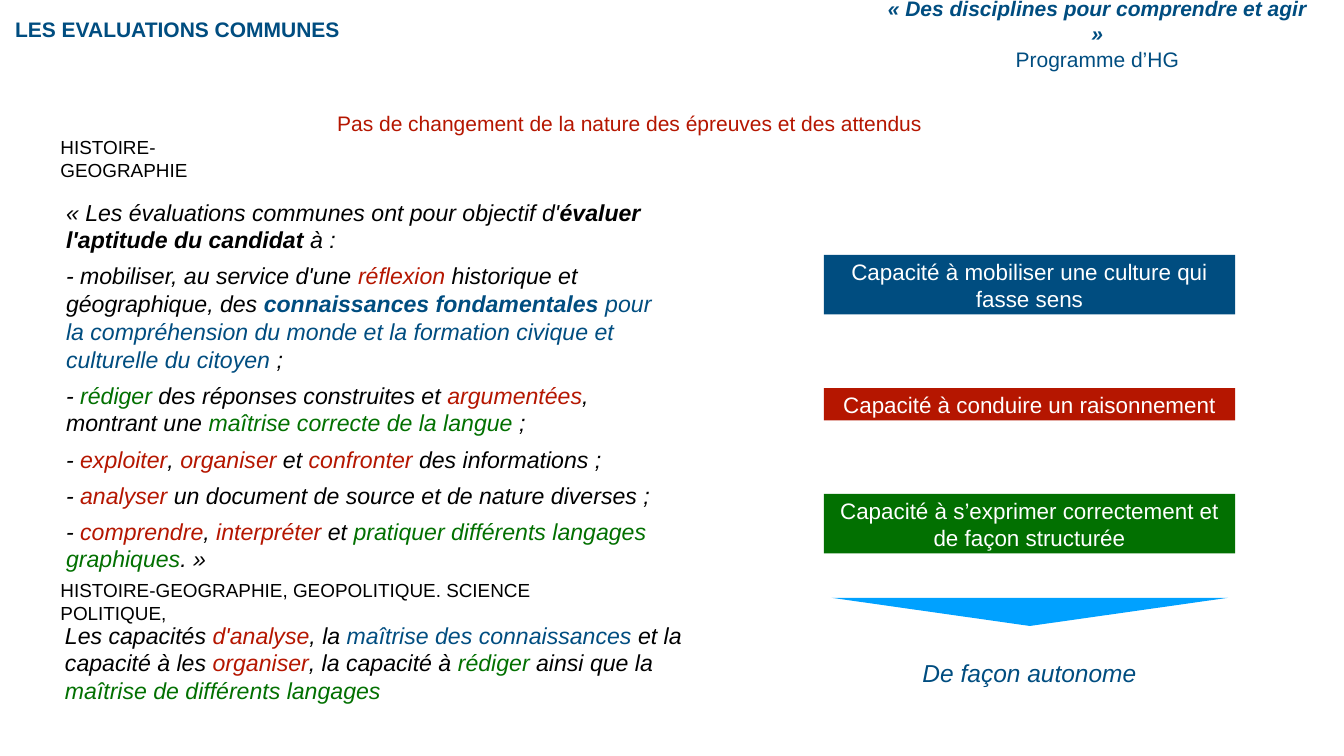
"""Build the slide on the common assessments in history and geography."""
from pptx import Presentation
from pptx import util as u
from pptx.dml.color import RGBColor
from pptx.enum import shapes, text

WIDTH, HEIGHT = u.Inches(26.67), u.Inches(15)
FONT = "Arial"
COLORS = {"black": "000000", "white": "FFFFFF", "blue": "004D80",
          "red": "B51600", "green": "027001", "sky": "00A1FF"}
BANNER_LEFT, BANNER_WIDTH = 61.3, 30.6

OBJECTIVES = [
    ["« Les évaluations communes ont pour objectif d'",
     ("évaluer l'aptitude du candidat", "black", True), " à :"],
    ["- mobiliser, au service d'une ", ("réflexion", "red"),
     " historique et géographique, des ",
     ("connaissances fondamentales", "blue", True),
     (" pour la compréhension du monde et la formation civique et "
      "culturelle du citoyen", "blue"), " ;"],
    ["- ", ("rédiger", "green"), " des réponses construites et ",
     ("argumentées", "red"), ", montrant une ",
     ("maîtrise correcte de la langue", "green"), " ;"],
    ["- ", ("exploiter", "red"), ", ", ("organiser", "red"), " et ",
     ("confronter", "red"), " des informations ;"],
    ["- ", ("analyser", "red"),
     " un document de source et de nature diverses ;"],
    ["- ", ("comprendre", "red"), ", ", ("interpréter", "red"), " et ",
     ("pratiquer différents langages graphiques", "green"), ". »"],
]
SKILLS = [
    ["Les capacités ", ("d'analyse", "red"), ", la ",
     ("maîtrise des connaissances", "blue"), " et la capacité à les ",
     ("organiser", "red"), ", la capacité à ", ("rédiger", "green"),
     " ainsi que la ", ("maîtrise de différents langages", "green")],
]
BANNERS = [
    ("Capacité à mobiliser une culture qui fasse sens", "blue", 33.73, 7.87),
    ("Capacité à conduire un raisonnement", "red", 51.33, 4.27),
    ("Capacité à s’exprimer correctement et de façon structurée",
     "green", 65.33, 7.87),
]


def rgb(name):
    """Return the palette colour called name."""
    return RGBColor.from_string(COLORS[name])


def place(left, top, width, height):
    """Turn percentages of the slide into a left, top, width, height tuple."""
    return (int(WIDTH * left / 100), int(HEIGHT * top / 100),
            int(WIDTH * width / 100), int(HEIGHT * height / 100))


def paint(shape, color):
    """Give a shape a flat fill with no outline and no shadow."""
    shape.shadow.inherit = False
    shape.fill.solid()
    shape.fill.fore_color.rgb = rgb(color)
    shape.line.fill.background()


def write(shape, paragraphs, size, color="black", bold=False, italic=False,
          align=text.PP_ALIGN.LEFT, before=0, wrap=True):
    """Fill a shape with paragraphs of runs: a string or (text, colour, bold)."""
    frame = shape.text_frame
    frame.word_wrap = wrap
    frame.auto_size = text.MSO_AUTO_SIZE.SHAPE_TO_FIT_TEXT
    frame.vertical_anchor = text.MSO_ANCHOR.MIDDLE
    frame.margin_left = frame.margin_right = u.Inches(0.06)
    frame.margin_top = frame.margin_bottom = u.Inches(0.06)
    for index, pieces in enumerate(paragraphs):
        paragraph = frame.add_paragraph() if index else frame.paragraphs[0]
        paragraph.alignment = align
        paragraph.space_before = u.Pt(before)
        for piece in pieces:
            words, *style = (piece, color, bold) if isinstance(piece, str) else piece
            run = paragraph.add_run()
            run.text = words
            run.font.name, run.font.size = FONT, u.Pt(size)
            run.font.color.rgb = rgb(style[0])
            run.font.bold = style[1] if len(style) > 1 else False
            run.font.italic = italic


def add_text(slide, box, paragraphs, size, **style):
    """Add a text box."""
    write(slide.shapes.add_textbox(*place(*box)), paragraphs, size, **style)


def add_label(slide, box, words, size, **style):
    """Add a text box with one unwrapped line in a single format."""
    add_text(slide, box, [[words]], size, wrap=False, **style)


def add_banner(slide, words, color, top, height):
    """Add a filled rectangle that names one capacity."""
    shape = slide.shapes.add_shape(
        shapes.MSO_SHAPE.RECTANGLE, *place(BANNER_LEFT, top, BANNER_WIDTH, height))
    paint(shape, color)
    write(shape, [[words]], 32, color="white", align=text.PP_ALIGN.CENTER)


def add_down_pointer(slide, box, color):
    """Add a flat triangle that points down."""
    left, top, width, height = place(*box)
    builder = slide.shapes.build_freeform(left + width // 2, top + height)
    builder.add_line_segments([(left + width, top), (left, top)], close=True)
    paint(builder.convert_to_shape(), color)


def main():
    """Build and save the slide."""
    presentation = Presentation()
    presentation.slide_width, presentation.slide_height = WIDTH, HEIGHT
    slide = presentation.slides.add_slide(presentation.slide_layouts[6])
    center = text.PP_ALIGN.CENTER

    add_text(slide, (4.69, 23.2, 44.88, 55.53), OBJECTIVES, 33,
             italic=True, before=12)
    add_label(slide, (24.86, 14.27, 44.13, 4),
              "Pas de changement de la nature des épreuves et des attendus",
              30, color="red")
    for banner in BANNERS:
        add_banner(slide, *banner)
    add_label(slide, (68.39, 86.73, 16.42, 4.47), "De façon autonome", 35,
              color="blue", italic=True, align=center)

    motto = slide.shapes.add_textbox(*place(65.39, 0.73, 32.51, 7.4))
    write(motto, [["« Des disciplines pour comprendre et agir »"],
                  [("Programme d’HG", "blue")]], 30,
          color="blue", bold=True, italic=True, align=center, wrap=False)
    motto.text_frame.paragraphs[1].runs[0].font.italic = False

    add_text(slide, (4.61, 81.8, 46.38, 11.73), SKILLS, 33,
             italic=True, before=12)
    add_label(slide, (4.27, 19.13, 16.46, 3.73), "HISTOIRE-GEOGRAPHIE", 27)
    add_label(slide, (4.27, 77.73, 42.71, 3.73),
              "HISTOIRE-GEOGRAPHIE, GEOPOLITIQUE. SCIENCE POLITIQUE,", 27)
    add_down_pointer(slide, (61.87, 79.07, 29.51, 3.73), "sky")
    add_label(slide, (0.9, 1.8, 24.63, 4.07), "LES EVALUATIONS COMMUNES", 30,
              color="blue", bold=True)
    presentation.save("out.pptx")


if __name__ == "__main__":
    main()
